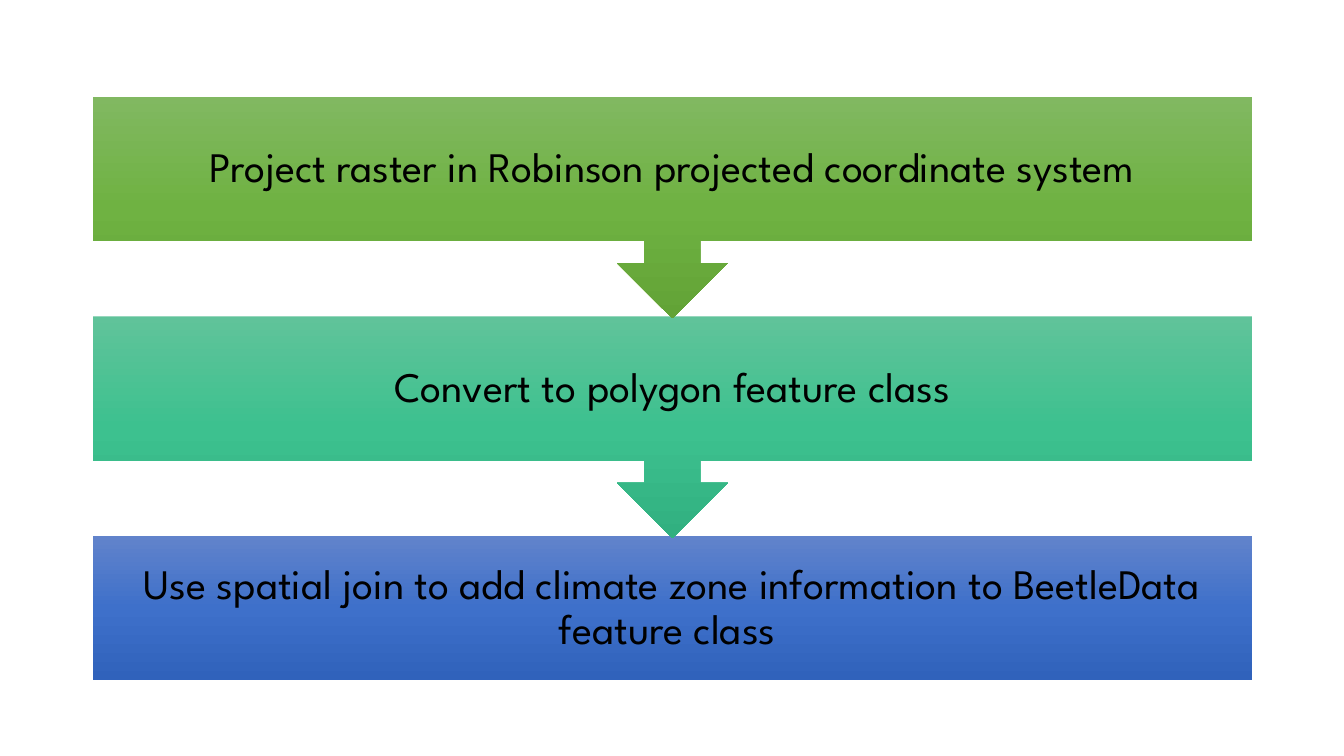
from copy import deepcopy

from pptx import Presentation
from pptx.dml.color import RGBColor
from pptx.enum.shapes import MSO_SHAPE as Shape
from pptx.enum.text import MSO_ANCHOR as Anchor, PP_ALIGN as Align
from pptx.oxml.ns import qn
from pptx.util import Inches, Pt

FONT = "League Spartan"
BLACK = RGBColor(0x00, 0x00, 0x00)
GREEN = (RGBColor(0x81, 0xB8, 0x61), RGBColor(0x6F, 0xB2, 0x42), RGBColor(0x62, 0xA3, 0x36))
TEAL = (RGBColor(0x60, 0xC3, 0x9A), RGBColor(0x3D, 0xC1, 0x8F), RGBColor(0x31, 0xB0, 0x80))
BLUE = (RGBColor(0x61, 0x83, 0xCB), RGBColor(0x3E, 0x70, 0xCA), RGBColor(0x30, 0x62, 0xBB))

STEPS = [
    ("Project raster in Robinson projected coordinate system", GREEN),
    ("Convert to polygon feature class", TEAL),
    ("Use spatial join to add climate zone information to BeetleData feature class ", BLUE),
]
LEFT, TOP, WIDTH = 0.92, 0.96, 11.5
BOX_HEIGHT, CALLOUT_HEIGHT, PITCH = 1.43, 2.2, 2.18


def fill_gradient(shape, colors):
    """Fill from top to bottom with three evenly spaced colours."""
    shape.fill.gradient()
    shape.fill.gradient_angle = 270
    stop_list = shape._element.spPr.find(qn("a:gradFill")).find(qn("a:gsLst"))
    stop_list.insert(1, deepcopy(stop_list[0]))
    for index, (stop, color) in enumerate(zip(shape.fill.gradient_stops, colors)):
        stop.position = index / 2
        stop.color.rgb = color


def write_label(shape, text):
    frame = shape.text_frame
    frame.text = text
    frame.word_wrap = True
    frame.vertical_anchor = Anchor.MIDDLE
    frame.margin_left = frame.margin_right = Inches(0.23)
    frame.margin_top = frame.margin_bottom = Inches(0.23)
    paragraph = frame.paragraphs[0]
    paragraph.alignment = Align.CENTER
    paragraph.line_spacing = 0.9
    font = paragraph.runs[0].font
    font.name = FONT
    font.size = Pt(30)
    font.color.rgb = BLACK


def add_step(slide, top, text, colors, is_last):
    """Add a process box; all but the last carry an arrow to the next."""
    kind = Shape.RECTANGLE if is_last else Shape.DOWN_ARROW_CALLOUT
    height = BOX_HEIGHT if is_last else CALLOUT_HEIGHT
    shape = slide.shapes.add_shape(
        kind, Inches(LEFT), Inches(top), Inches(WIDTH), Inches(height)
    )
    shape.shadow.inherit = False
    shape.line.fill.background()
    fill_gradient(shape, colors)
    write_label(shape, text)


def main():
    presentation = Presentation()
    presentation.slide_width = Inches(13.33)
    presentation.slide_height = Inches(7.5)
    slide = presentation.slides.add_slide(presentation.slide_layouts[6])
    last = len(STEPS) - 1
    for index, (text, colors) in reversed(list(enumerate(STEPS))):
        add_step(slide, TOP + index * PITCH, text, colors, index == last)
    presentation.save("out.pptx")


if __name__ == "__main__":
    main()
